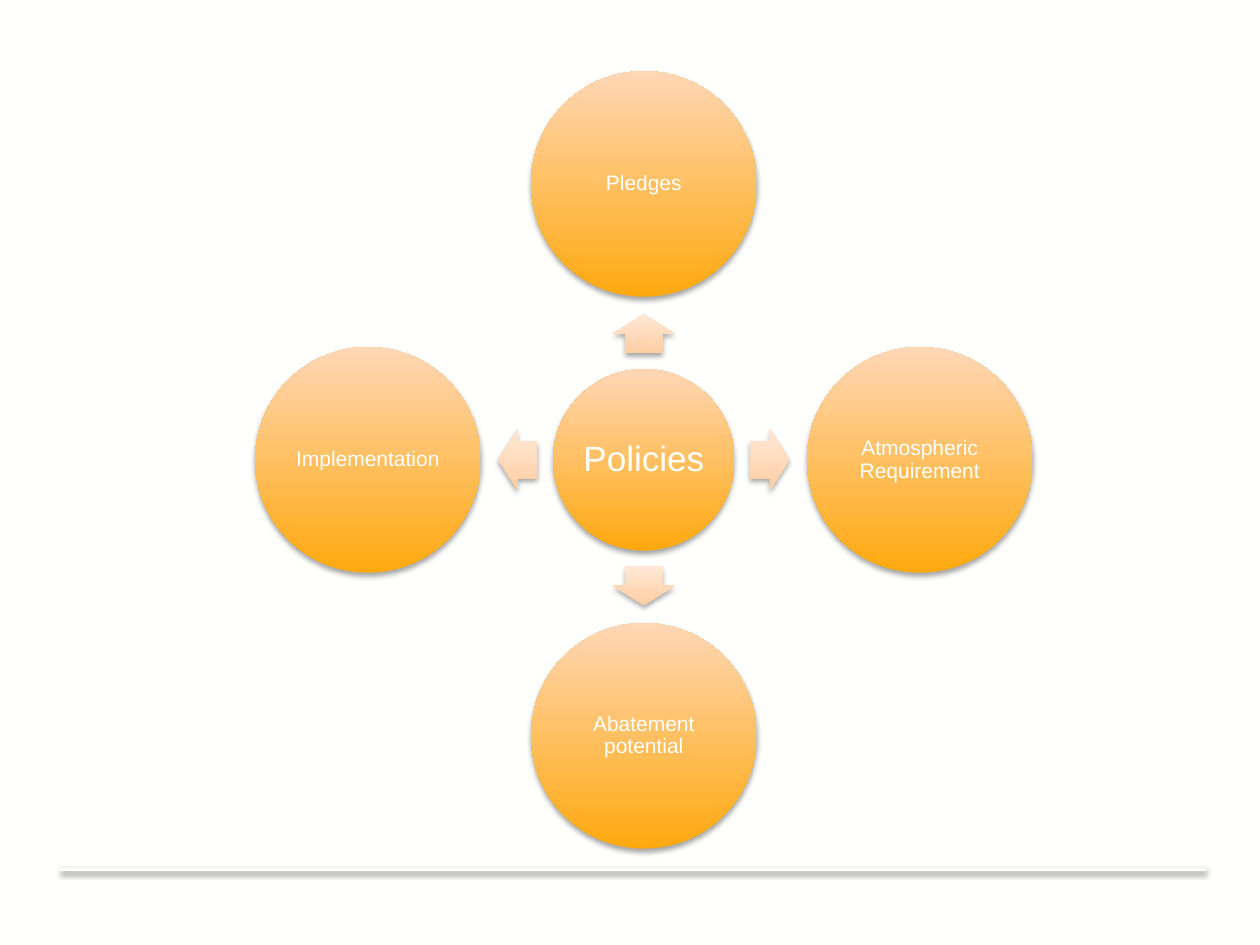
from math import cos, radians, sin

from lxml import etree
from pptx import Presentation
from pptx.dml.color import RGBColor
from pptx.enum.shapes import MSO_CONNECTOR, MSO_SHAPE
from pptx.enum.text import MSO_ANCHOR, PP_ALIGN
from pptx.oxml.ns import qn
from pptx.util import Inches, Pt

OVAL, ARROW = MSO_SHAPE.OVAL, MSO_SHAPE.RIGHT_ARROW
LINE = MSO_CONNECTOR.STRAIGHT
CENTER, MIDDLE = PP_ALIGN.CENTER, MSO_ANCHOR.MIDDLE

WIDE, HIGH = 10, 7.5
COLORS = {
    "page": "FFFFFE", "text": "FFFFFE", "rule": "FFFFFF", "shade": "000000",
    "deep": "FFA90F", "soft": "FFD7B5",
    "arrow": "FFCEA2", "pale": "FFE8D6",
}


class Deck:
    """Holds the style and the current slide; lengths are shares of the slide."""

    def __init__(self, font="Arial"):
        self.font = font
        self.prs = Presentation()
        self.prs.slide_width = Inches(WIDE)
        self.prs.slide_height = Inches(HIGH)
        self.slide = self.prs.slides.add_slide(self.prs.slide_layouts[6])
        fill = self.slide.background.fill
        fill.solid()
        fill.fore_color.rgb = self.color("page")

    def color(self, name):
        return RGBColor.from_string(COLORS[name])

    def x(self, share):
        return round(self.prs.slide_width * share)

    def y(self, share):
        return round(self.prs.slide_height * share)

    def shade(self, shape, alpha, dist):
        """Soft shadow straight below the shape."""
        effects = etree.SubElement(shape._element.spPr, qn("a:effectLst"))
        outer = etree.SubElement(
            effects, qn("a:outerShdw"), blurRad=str(Pt(3.1)),
            dist=str(Pt(dist)), dir="5400000", rotWithShape="0")
        tint = etree.SubElement(outer, qn("a:srgbClr"), val=COLORS["shade"])
        etree.SubElement(tint, qn("a:alpha"), val=str(alpha * 1000))

    def shape(self, kind, mid, size, low, high):
        """Shape about its middle, shaded from low up to high."""
        wide, tall = self.x(size[0]), self.y(size[1])
        shape = self.slide.shapes.add_shape(
            kind, self.x(mid[0]) - wide // 2, self.y(mid[1]) - tall // 2,
            wide, tall)
        shape.fill.gradient()
        shape.fill.gradient_angle = 90
        for stop, name in zip(shape.fill.gradient_stops, (low, high)):
            stop.color.rgb = self.color(name)
        # Keep the shading upright when the shape is turned
        shape._element.spPr.find(qn("a:gradFill")).set("rotWithShape", "0")
        shape.line.fill.background()
        self.shade(shape, 35, 1.8)
        return shape

    def circle(self, text, mid, size, points):
        shape = self.shape(OVAL, mid, size, "deep", "soft")
        frame = shape.text_frame
        frame.word_wrap = True
        frame.vertical_anchor = MIDDLE
        frame.margin_left = frame.margin_right = 0
        frame.margin_top = frame.margin_bottom = 0
        par = frame.paragraphs[0]
        par.text = text
        par.alignment = CENTER
        par.line_spacing = 0.9
        par.font.name = self.font
        par.font.size = Pt(points)
        par.font.color.rgb = self.color("text")

    def arrow(self, mid, size, turn):
        shape = self.shape(ARROW, mid, size, "arrow", "pale")
        shape.adjustments[0], shape.adjustments[1] = 0.6, 0.5
        shape.rotation = turn

    def rule(self, left, right, top):
        line = self.slide.shapes.add_connector(
            LINE, self.x(left), self.y(top), self.x(right), self.y(top))
        line.line.color.rgb = self.color("rule")
        line.line.width = Pt(2)
        self.shade(line, 38, 1.6)


def share(wide, high):
    """Turns inches into shares of the slide."""
    return wide / WIDE, high / HIGH


def main():
    deck = Deck()

    # Footer rule
    deck.rule(0.048, 0.957, 0.92)

    # Hub
    hub = (5.11, 3.65)
    deck.circle("Policies", share(*hub), share(1.44, 1.44), 20)

    # Spokes, clockwise from the top
    names = ["Pledges", "Atmospheric Requirement",
             "Abatement potential", "Implementation"]
    for i, name in enumerate(names):
        turn = (270 + 90 * i) % 360
        dx, dy = cos(radians(turn)), sin(radians(turn))
        near, far = (share(hub[0] + gap * dx, hub[1] + gap * dy)
                     for gap in (1, 2.19))
        deck.arrow(near, share(0.31, 0.49), turn)
        deck.circle(name, far, share(1.79, 1.79), 12)

    deck.prs.save("out.pptx")


if __name__ == "__main__":
    main()
